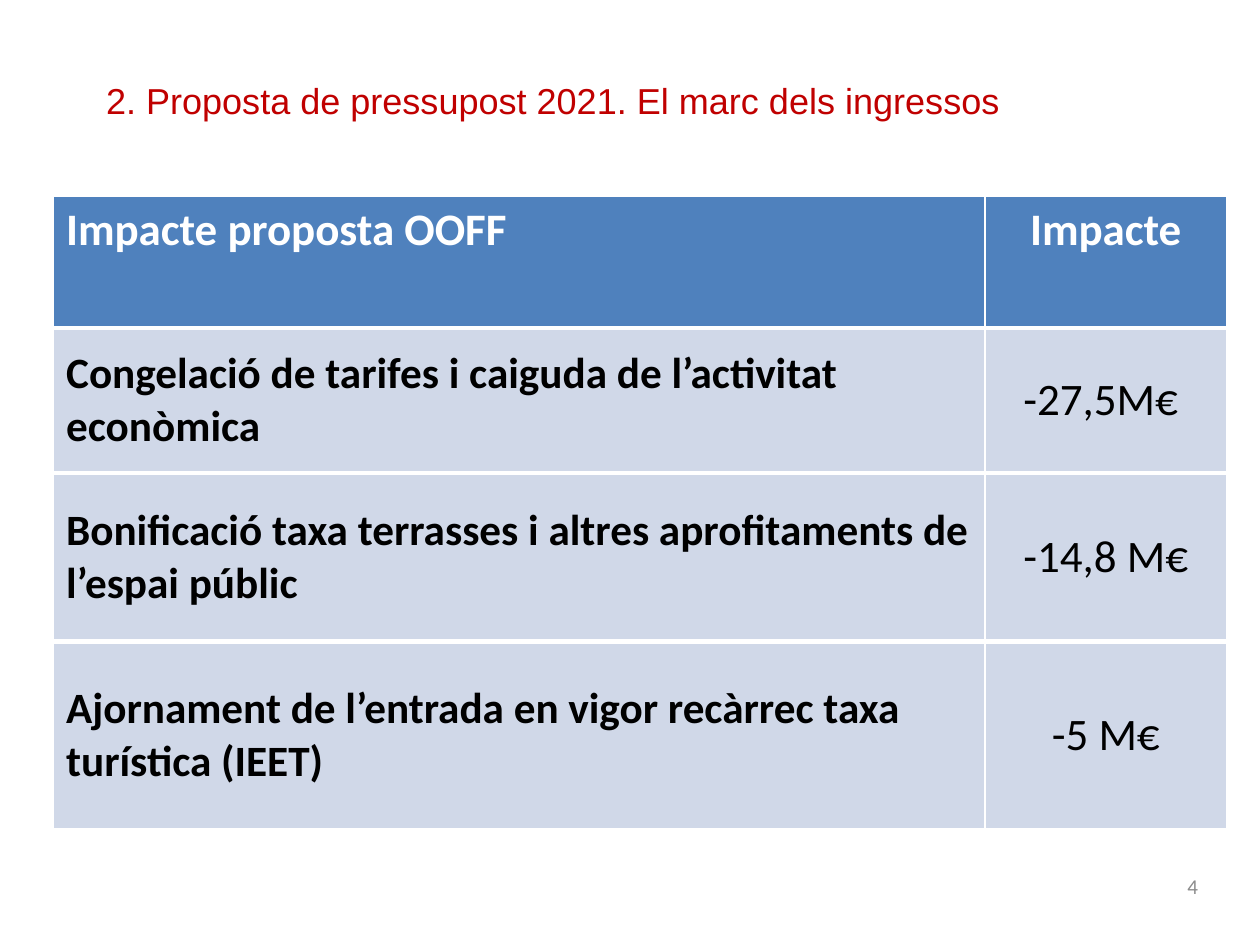
from typing import NamedTuple

from lxml.etree import SubElement
from pptx import Presentation
from pptx.dml.color import RGBColor
from pptx.enum.text import MSO_ANCHOR, PP_ALIGN
from pptx.oxml.ns import qn
from pptx.util import Inches, Pt

RED = RGBColor(0xC0, 0x00, 0x00)
BLUE = RGBColor(0x4F, 0x81, 0xBD)
PALE_BLUE = RGBColor(0xD0, 0xD8, 0xE8)
WHITE = RGBColor(0xFF, 0xFF, 0xFF)
BLACK = RGBColor(0x00, 0x00, 0x00)
GREY = RGBColor(0x8C, 0x8C, 0x8C)

SLIDE_WIDTH, SLIDE_HEIGHT = Inches(9.72), Inches(7.32)
THIN, THICK = Pt(1), Pt(3)


class Style(NamedTuple):
    size: float
    color: RGBColor
    font: str = "Calibri"
    bold: bool = False
    align: PP_ALIGN = PP_ALIGN.LEFT
    anchor: MSO_ANCHOR = MSO_ANCHOR.MIDDLE


class Label(NamedTuple):
    text: str
    left: float  # positions and sizes in percent of the slide
    top: float
    width: float
    height: float
    style: Style


class Row(NamedTuple):
    concept: str
    impact: str
    height: float  # percent of the slide height


LABELS = [
    Label("4", 72.74, 90.71, 23.35, 5.33, Style(11.7, GREY, align=PP_ALIGN.RIGHT)),
    Label("2. Proposta de pressupost 2021. El marc dels ingressos",
          7.41, 7.65, 78.7, 5.87, Style(20, RED, "Arial", anchor=MSO_ANCHOR.TOP)),
]
ROWS = [
    Row("Impacte proposta OOFF", "Impacte", 13.93),
    Row("Congelació de tarifes i caiguda de l’activitat econòmica", "-27,5M€ ", 15.3),
    Row("Bonificació taxa terrasses i altres aprofitaments de l’espai públic",
        "-14,8 M€", 17.76),
    Row("Ajornament de l’entrada en vigor recàrrec taxa turística (IEET)", "-5 M€", 19.67),
]
TABLE_LEFT, TABLE_TOP = 4.22, 20.63
COLUMN_WIDTHS = [73.97, 19.14]

HEADER = Style(25, WHITE, bold=True, anchor=MSO_ANCHOR.TOP)
HEADER_STYLES = [HEADER, HEADER._replace(align=PP_ALIGN.CENTER)]
BODY_STYLES = [Style(24, BLACK, bold=True), Style(25, BLACK, align=PP_ALIGN.CENTER)]


def across(percent: float) -> int:
    return round(SLIDE_WIDTH * percent / 100)


def down(percent: float) -> int:
    return round(SLIDE_HEIGHT * percent / 100)


def write(text_frame, text: str, style: Style) -> None:
    text_frame.text = text
    paragraph = text_frame.paragraphs[0]
    paragraph.alignment = style.align
    font = paragraph.runs[0].font
    font.name, font.size, font.bold = style.font, Pt(style.size), style.bold
    font.color.rgb = style.color


def add_label(slide, label: Label) -> None:
    shape = slide.shapes.add_textbox(across(label.left), down(label.top),
                                     across(label.width), down(label.height))
    shape.text_frame.word_wrap = True
    shape.text_frame.vertical_anchor = label.style.anchor
    write(shape.text_frame, label.text, label.style)


def set_borders(cell, top: int, bottom: int) -> None:
    properties = cell._tc.get_or_add_tcPr()
    widths = {"a:lnL": THIN, "a:lnR": THIN, "a:lnT": top, "a:lnB": bottom}
    for position, (tag, width) in enumerate(widths.items()):
        line = SubElement(properties, qn(tag), w=str(width))
        fill = SubElement(line, qn("a:solidFill"))
        SubElement(fill, qn("a:srgbClr"), val=str(WHITE))
        properties.insert(position, line)  # borders come before the fill


def add_impact_table(slide) -> None:
    table = slide.shapes.add_table(
        len(ROWS), len(COLUMN_WIDTHS), across(TABLE_LEFT), down(TABLE_TOP),
        across(sum(COLUMN_WIDTHS)), down(sum(row.height for row in ROWS))).table
    table.horz_banding = False
    for column, width in zip(table.columns, COLUMN_WIDTHS):
        column.width = across(width)
    last = len(ROWS) - 1
    for index, row in enumerate(ROWS):
        table.rows[index].height = down(row.height)
        styles = BODY_STYLES if index else HEADER_STYLES
        for column, (text, style) in enumerate(zip((row.concept, row.impact), styles)):
            cell = table.cell(index, column)
            cell.vertical_anchor = style.anchor
            cell.fill.solid()
            cell.fill.fore_color.rgb = PALE_BLUE if index else BLUE
            write(cell.text_frame, text, style)
            set_borders(cell, THICK if index else THIN, THIN if index == last else THICK)


def main() -> None:
    presentation = Presentation()
    presentation.slide_width, presentation.slide_height = SLIDE_WIDTH, SLIDE_HEIGHT
    slide = presentation.slides.add_slide(presentation.slide_layouts[6])

    # Page number and title
    for label in LABELS:
        add_label(slide, label)

    # Impact of each measure
    add_impact_table(slide)

    presentation.save("out.pptx")


if __name__ == "__main__":
    main()
